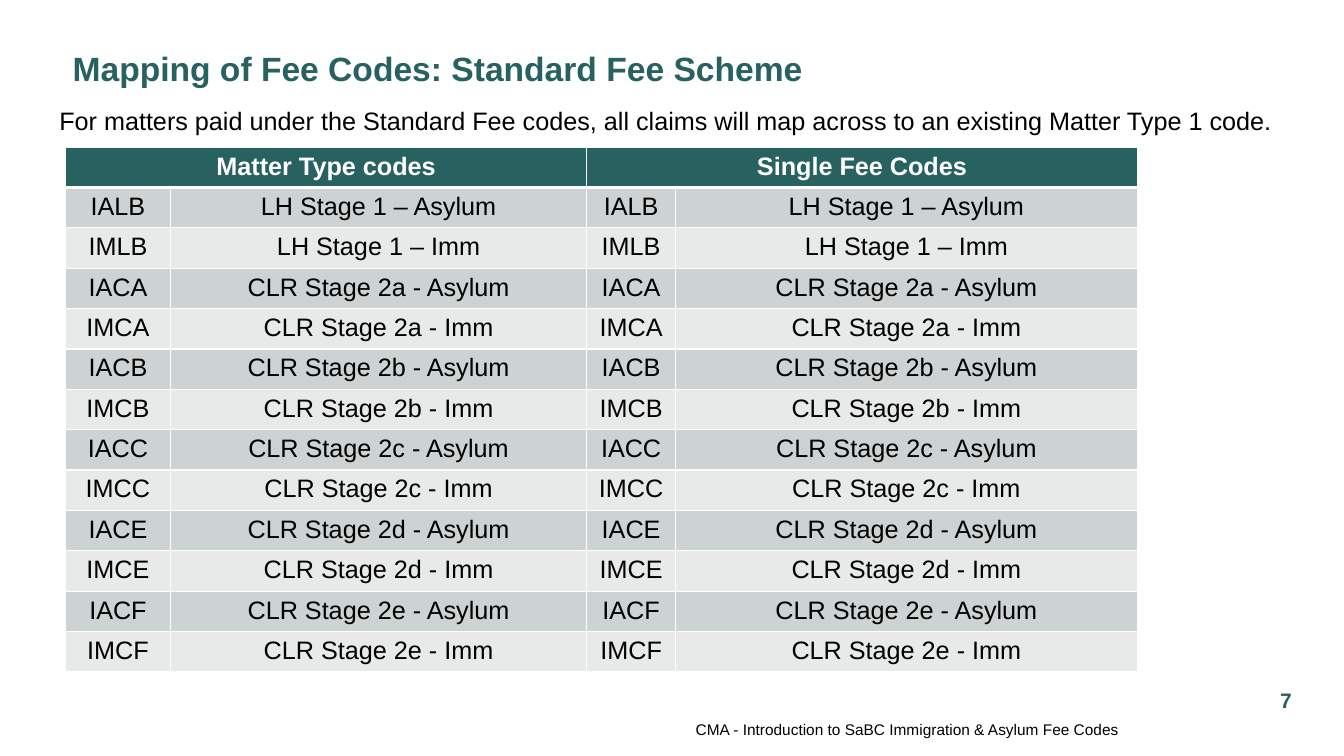
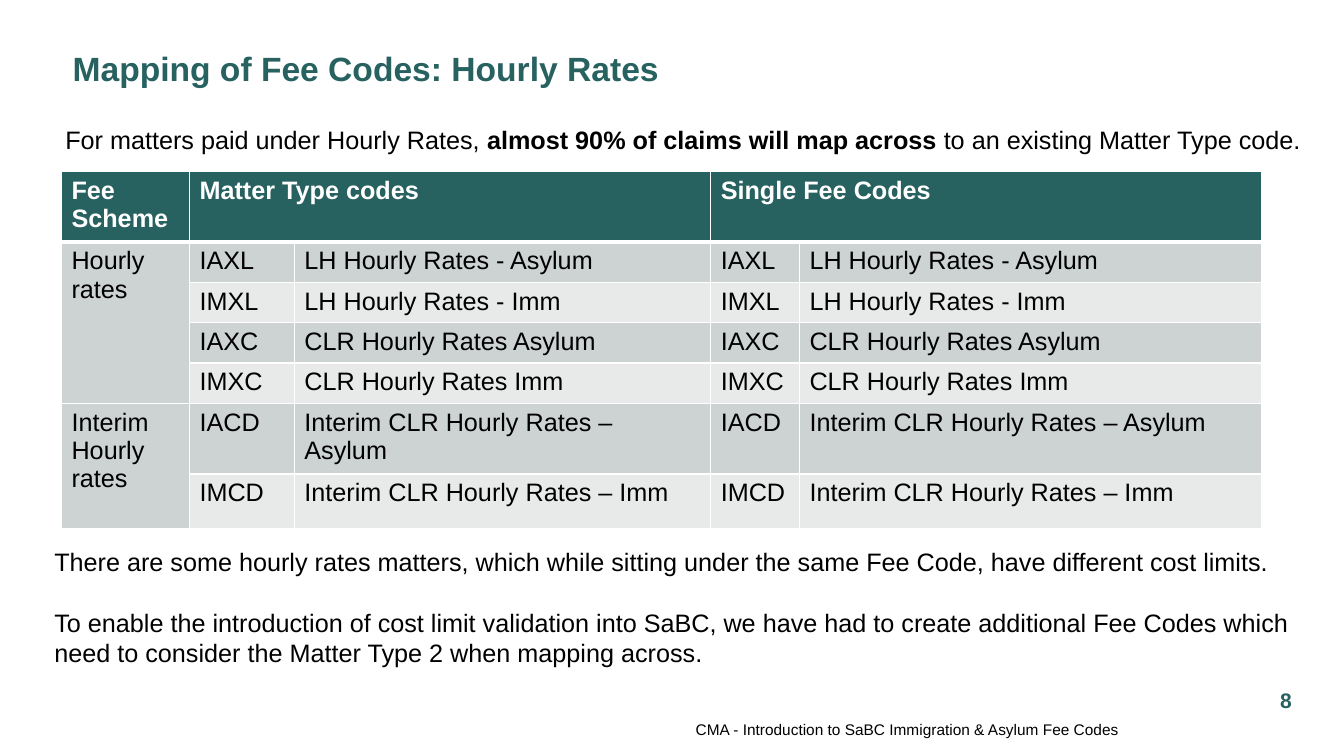
from dataclasses import dataclass

from lxml import etree
from pptx import Presentation
from pptx.dml.color import RGBColor
from pptx.enum.text import MSO_ANCHOR, MSO_AUTO_SIZE, PP_ALIGN
from pptx.oxml.ns import qn
from pptx.util import Inches, Pt


@dataclass(frozen=True)
class Theme:
    font: str = "Arial"
    teal: str = "276160"
    white: str = "FFFFFF"
    black: str = "000000"
    odd_row: str = "CDD2D2"
    even_row: str = "E8EAEA"
    title_size: int = 24
    body_size: int = 18
    number_size: int = 15
    footer_size: int = 11
    thin: float = 1
    thick: float = 3


THEME = Theme()

# Boxes: left, top, width, height
TITLE_BOX = (0.72, 0.19, 11.73, 0.98)
NUMBER_BOX = (12.51, 6.75, 0.49, 0.4)
FOOTER_BOX = (3.22, 7.14, 7.88, 0.2)
FOOTER = "CMA - Introduction to SaBC Immigration & Asylum Fee Codes"

CODE_COLUMNS = [1.04, 4.13, 0.88, 4.58]
SCHEME_COLUMN = 1.27
ROW_HEIGHT = 0.4
CODE_HEADINGS = ["Matter Type codes", "Single Fee Codes"]

STANDARD_CODES = [
    ("IALB", "LH Stage 1 – Asylum"),
    ("IMLB", "LH Stage 1 – Imm"),
] + [
    (f"I{kind[0] if kind == 'Asylum' else 'M'}C{code}", f"CLR Stage 2{stage} - {kind}")
    for code, stage in zip("ABCEF", "abcde")
    for kind in ("Asylum", "Imm")
]

HOURLY_SCHEMES = [
    ("Hourly rates", [
        ("IAXL", "LH Hourly Rates - Asylum"),
        ("IMXL", "LH Hourly Rates - Imm"),
        ("IAXC", "CLR Hourly Rates Asylum"),
        ("IMXC", "CLR Hourly Rates Imm"),
    ]),
    ("Interim Hourly rates", [
        ("IACD", "Interim CLR Hourly Rates – Asylum"),
        ("IMCD", "Interim CLR Hourly Rates – Imm"),
    ]),
]


def inches(box):
    return [Inches(length) for length in box]


def style_run(run, size, color, bold=False):
    run.font.name = THEME.font
    run.font.size = Pt(size)
    run.font.bold = bold
    run.font.color.rgb = RGBColor.from_string(color)


def style_frame(frame, size, color, bold=False, align=PP_ALIGN.LEFT):
    for paragraph in frame.paragraphs:
        paragraph.alignment = align
        for run in paragraph.runs:
            style_run(run, size, color, bold)


def remove_insets(frame):
    frame.margin_left = frame.margin_right = 0
    frame.margin_top = frame.margin_bottom = 0
    frame.vertical_anchor = MSO_ANCHOR.MIDDLE


def add_title(slide, text, box):
    title = slide.shapes.title
    title.left, title.top, title.width, title.height = inches(box)
    frame = title.text_frame
    frame.text = text
    frame.auto_size = MSO_AUTO_SIZE.NONE
    remove_insets(frame)
    style_frame(frame, THEME.title_size, THEME.teal, bold=True)


def add_label(slide, text, box, size, color, align, bold=False):
    frame = slide.shapes.add_textbox(*inches(box)).text_frame
    frame.word_wrap = True
    frame.text = text
    remove_insets(frame)
    style_frame(frame, size, color, bold, align)


def add_body(slide, paragraphs, box, gap=0):
    """Each paragraph is a list of (text, bold) pieces."""
    frame = slide.shapes.add_textbox(*inches(box)).text_frame
    frame.word_wrap = True
    for index, pieces in enumerate(paragraphs):
        paragraph = frame.add_paragraph() if index else frame.paragraphs[0]
        if index:
            paragraph.space_before = Pt(gap)
        for text, bold in pieces:
            run = paragraph.add_run()
            run.text = text
            style_run(run, THEME.body_size, THEME.black, bold)


def set_borders(cell, top, bottom):
    properties = cell._tc.get_or_add_tcPr()
    widths = {"a:lnL": THEME.thin, "a:lnR": THEME.thin, "a:lnT": top, "a:lnB": bottom}
    for side, width in widths.items():
        line = etree.SubElement(properties, qn(side), w=str(Pt(width)))
        fill = etree.SubElement(line, qn("a:solidFill"))
        etree.SubElement(fill, qn("a:srgbClr"), val=THEME.white)


def add_code_table(slide, rows, merges, columns, heights, origin, align, label_columns=0):
    """Draw a header row and banded rows; label columns keep one band colour."""
    box = (*origin, sum(columns), sum(heights))
    table = slide.shapes.add_table(len(rows), len(columns), *inches(box)).table
    for column, width in zip(table.columns, columns):
        column.width = Inches(width)
    for row, height in zip(table.rows, heights):
        row.height = Inches(height)

    for r, texts in enumerate(rows):
        header = r == 0
        for c, text in enumerate(texts):
            cell = table.cell(r, c)
            set_borders(cell,
                        THEME.thick if r == 1 else THEME.thin,
                        THEME.thick if header else THEME.thin)
            banded = r % 2 == 1 or c < label_columns
            band = THEME.odd_row if banded else THEME.even_row
            cell.fill.solid()
            cell.fill.fore_color.rgb = RGBColor.from_string(THEME.teal if header else band)
            cell.text_frame.text = text
            style_frame(cell.text_frame, THEME.body_size,
                        THEME.white if header else THEME.black, header, align)
    for first, last in merges:
        table.cell(*first).merge(table.cell(*last))


def add_page(prs, title, number):
    """Start a slide with the shared title, page number and footer."""
    slide = prs.slides.add_slide(prs.slide_layouts[5])
    add_title(slide, title, TITLE_BOX)
    add_label(slide, str(number), NUMBER_BOX, THEME.number_size, THEME.teal,
              PP_ALIGN.CENTER, bold=True)
    add_label(slide, FOOTER, FOOTER_BOX, THEME.footer_size, THEME.black, PP_ALIGN.RIGHT)
    return slide


def header_cells():
    return [text for heading in CODE_HEADINGS for text in (heading, "")]


def build_standard_fees(prs):
    slide = add_page(prs, "Mapping of Fee Codes: Standard Fee Scheme", 7)
    # Both halves of the table carry the same codes
    rows = [header_cells()] + [code * 2 for code in STANDARD_CODES]
    add_code_table(slide, rows, [((0, 0), (0, 1)), ((0, 2), (0, 3))], CODE_COLUMNS,
                   [ROW_HEIGHT] * len(rows), (0.65, 1.46), PP_ALIGN.CENTER)
    add_body(slide, [[("For matters paid under the Standard Fee codes, all claims will "
                       "map across to an existing Matter Type 1 code.", False)]],
             (0.49, 1, 12.3, 0.4))


def build_hourly_rates(prs):
    slide = add_page(prs, "Mapping of Fee Codes: Hourly Rates", 8)
    add_body(slide, [[("For matters paid under Hourly Rates, ", False),
                      ("almost 90% of claims will map across ", True),
                      ("to an existing Matter Type code.", False)]],
             (0.55, 1.18, 12.55, 0.4))

    # Scheme names span the rows of their codes
    rows = [["Fee Scheme"] + header_cells()]
    merges = [((0, 1), (0, 2)), ((0, 3), (0, 4))]
    for scheme, codes in HOURLY_SCHEMES:
        start = len(rows)
        for index, code in enumerate(codes):
            rows.append(["" if index else scheme, *code, *code])
        merges.append(((start, 0), (len(rows) - 1, 0)))
    heights = [0.65] + [ROW_HEIGHT] * (len(rows) - 2) + [0.54]
    add_code_table(slide, rows, merges, [SCHEME_COLUMN] + CODE_COLUMNS, heights,
                   (0.61, 1.7), PP_ALIGN.LEFT, label_columns=1)

    # Closing remarks
    add_body(slide, [
        [("There are some hourly rates matters, which while sitting under the same "
          "Fee Code, have different cost limits.", False)],
        [("To enable the introduction of cost limit validation into SaBC, we have had "
          "to create additional Fee Codes which need to consider the Matter Type 2 "
          "when mapping across.", False)],
    ], (0.44, 5.37, 12.45, 1.31), gap=22)


def main():
    prs = Presentation()
    prs.slide_width, prs.slide_height = Inches(13.33), Inches(7.5)
    build_standard_fees(prs)
    build_hourly_rates(prs)
    prs.save("out.pptx")


if __name__ == "__main__":
    main()
